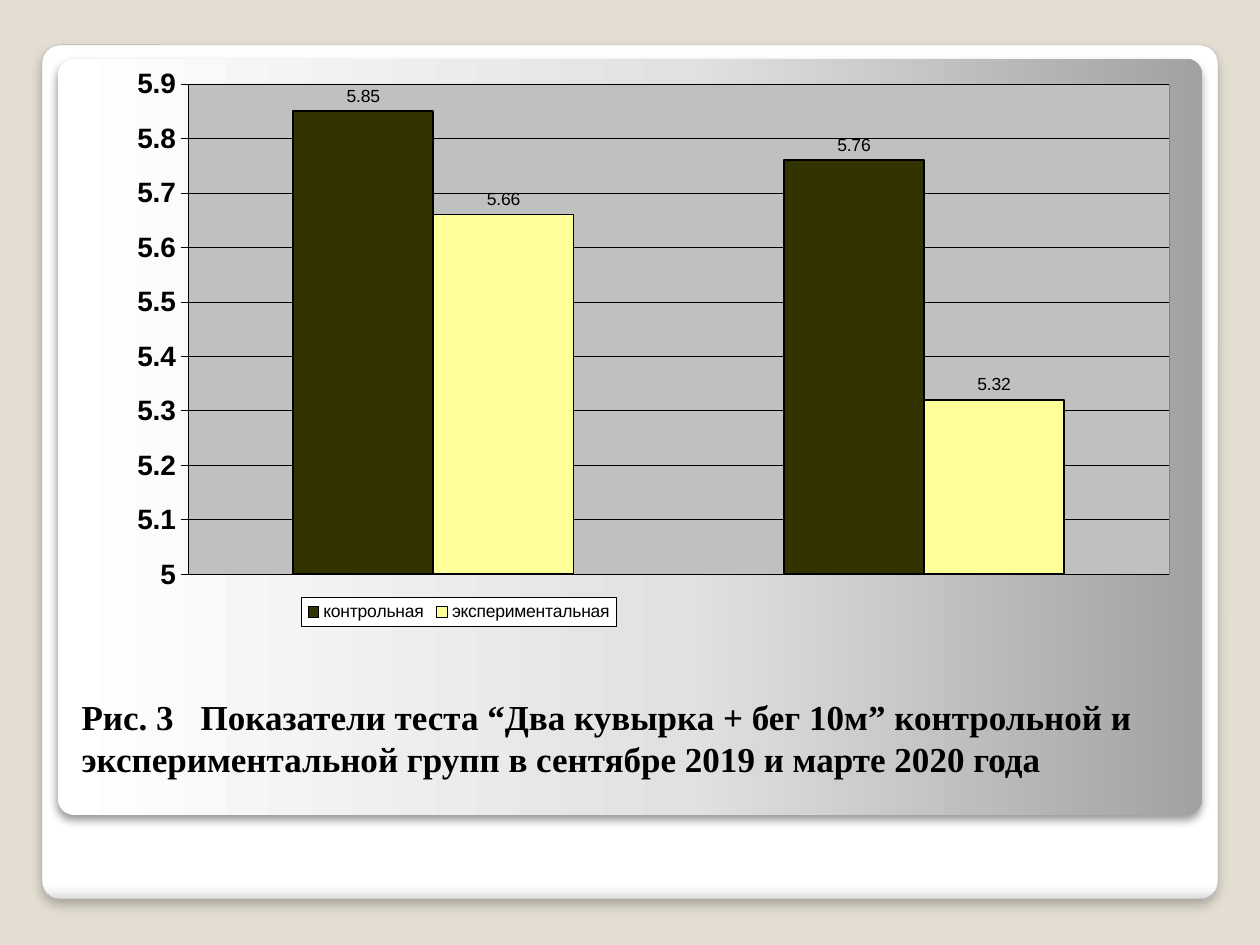
from dataclasses import dataclass

from pptx import Presentation
from pptx.chart.data import CategoryChartData
from pptx.dml.color import RGBColor as Rgb
from pptx.enum.chart import XL_CHART_TYPE as ChartKind
from pptx.enum.chart import XL_LABEL_POSITION as LabelPlace
from pptx.enum.chart import XL_LEGEND_POSITION as LegendPlace
from pptx.enum.chart import XL_TICK_MARK as Tick
from pptx.enum.shapes import MSO_SHAPE as Shape
from pptx.enum.text import MSO_ANCHOR as Anchor
from pptx.enum.text import MSO_AUTO_SIZE as AutoSize
from pptx.enum.text import PP_ALIGN as Align
from pptx.oxml import parse_xml
from pptx.oxml.ns import nsdecls
from pptx.util import Pt


@dataclass(frozen=True)
class Theme:
    backdrop: str = "E3DED1"
    ink: str = "000000"
    white: str = "FFFFFF"
    frame_line: str = "A4A4A3"
    plot: str = "C0C0C0"
    plot_line: str = "808080"
    control: str = "333300"
    experimental: str = "FFFF99"
    caption_font: str = "Times New Roman"
    chart_font: str = "Arial"
    caption_size: int = 20
    axis_size: int = 16
    chart_size: int = 10


theme = Theme()
PX = 914400 / 126


def add_panel(page, bounds, stops, angle, shadow, line=None):
    panel = page.shapes.add_shape(Shape.ROUNDED_RECTANGLE, *[round(n * PX) for n in bounds])
    panel.adjustments[0] = 0.021
    marks = "".join(
        f'<a:gs pos="{at * 1000}"><a:srgbClr val="{color}"/></a:gs>' for at, color in stops
    )
    panel.element.spPr.append(parse_xml(
        f'<a:gradFill {nsdecls("a")} rotWithShape="1"><a:gsLst>{marks}</a:gsLst>'
        f'<a:lin ang="{angle * 60000}" scaled="0"/></a:gradFill>'
    ))
    if line:
        panel.line.color.rgb = Rgb.from_string(line)
        panel.line.width = Pt(0.17)
    else:
        panel.line.fill.background()
    opacity, blur, distance = shadow
    panel.element.spPr.append(parse_xml(
        f'<a:effectLst {nsdecls("a")}><a:outerShdw blurRad="{Pt(blur)}" dist="{Pt(distance)}" '
        f'dir="5400000" algn="t" rotWithShape="0"><a:srgbClr val="{theme.ink}">'
        f'<a:alpha val="{opacity * 1000}"/></a:srgbClr></a:outerShdw></a:effectLst>'
    ))


def write_text(frame, text, *, font, size, color, bold=False, tab=None):
    para = frame.paragraphs[0]
    para.alignment = Align.LEFT
    if tab:
        para._p.get_or_add_pPr().append(parse_xml(
            f'<a:tabLst {nsdecls("a")}><a:tab pos="{round(tab * PX)}" algn="l"/></a:tabLst>'
        ))
    span = para.add_run()
    span.text = text
    span.font.name = font
    span.font.size = Pt(size)
    span.font.bold = bold
    span.font.color.rgb = Rgb.from_string(color)


deck = Presentation()
deck.slide_width = round(1260 * PX)
deck.slide_height = round(945 * PX)
page = deck.slides.add_slide(deck.slide_layouts[5])
page.background.fill.solid()
page.background.fill.fore_color.rgb = Rgb.from_string(theme.backdrop)

add_panel(page, (42, 45, 1176, 854),
          [(0, theme.white), (98, theme.white), (99, "F7F7F7"), (100, "DADADA")],
          90, (25, 6, 4), theme.frame_line)
add_panel(page, (58, 59, 1144, 756),
          [(0, theme.white), (55, "E1E1E1"), (100, "A2A2A2")], 0, (40, 5.2, 3))

caption = page.shapes.title
caption.element.getparent().append(caption.element)
caption.left, caption.top, caption.width, caption.height = [
    round(n * PX) for n in (69, 694, 1128, 92)
]
frame = caption.text_frame
frame.word_wrap = True
frame.auto_size = AutoSize.NONE
frame.vertical_anchor = Anchor.BOTTOM
write_text(
    frame,
    "Рис. 3\tПоказатели теста “Два кувырка + бег 10м” контрольной и "
    "экспериментальной групп в сентябре 2019 и марте 2020 года",
    font=theme.caption_font, size=theme.caption_size, color=theme.ink, bold=True, tab=119,
)

groups = [
    ("контрольная", (5.85, 5.76), theme.control),
    ("экспериментальная", (5.66, 5.32), theme.experimental),
]
results = CategoryChartData()
results.categories = ["1", "2"]
for name, values, color in groups:
    results.add_series(name, values)
chart = page.shapes.add_chart(
    ChartKind.COLUMN_CLUSTERED, *[round(n * PX) for n in (64, 55, 1128, 577)], results
).chart
chart.has_title = False
chart.font.name = theme.chart_font
chart.font.size = Pt(theme.chart_size)
chart.font.color.rgb = Rgb.from_string(theme.ink)
chart.has_legend = True
chart.legend.position = LegendPlace.BOTTOM
chart.legend.include_in_layout = False

columns = chart.plots[0]
columns.gap_width = 150
columns.overlap = 0
columns.vary_by_categories = False
for series, (name, values, color) in zip(columns.series, groups):
    series.format.fill.solid()
    series.format.fill.fore_color.rgb = Rgb.from_string(color)
    series.format.line.color.rgb = Rgb.from_string(theme.ink)
    series.format.line.width = Pt(1)
    series.data_labels.show_value = True
    series.data_labels.position = LabelPlace.OUTSIDE_END

chart.category_axis.visible = False
axis = chart.value_axis
axis.minimum_scale, axis.maximum_scale, axis.major_unit = 5, 5.9, 0.1
axis.major_tick_mark = Tick.OUTSIDE
axis.minor_tick_mark = Tick.NONE
axis.tick_labels.number_format = "General"
axis.tick_labels.number_format_is_linked = False
axis.tick_labels.font.name = theme.chart_font
axis.tick_labels.font.size = Pt(theme.axis_size)
axis.tick_labels.font.bold = True
axis.tick_labels.font.color.rgb = Rgb.from_string(theme.ink)
axis.has_major_gridlines = True
for rule in (axis.format.line, axis.major_gridlines.format.line):
    rule.color.rgb = Rgb.from_string(theme.ink)
    rule.width = Pt(0.25)

chart_space = chart.element
plot_area = chart_space.xpath("c:chart/c:plotArea")[0]
legend = chart_space.xpath("c:chart/c:legend")[0]
for part, index, target, box, fill, line in (
    (plot_area, 0, '<c:layoutTarget val="inner"/>', (0.11, 0.05, 0.87, 0.85),
     theme.plot, theme.plot_line),
    (legend, 1, "", (0.21, 0.94, 0.28, 0.05), theme.white, theme.ink),
):
    for layout in part.xpath("c:layout"):
        part.remove(layout)
    places = "".join(f'<c:{key}Mode val="edge"/>' for key in "xy")
    places += "".join(f'<c:{key} val="{value}"/>' for key, value in zip("xywh", box))
    part.insert(index, parse_xml(
        f'<c:layout {nsdecls("c")}><c:manualLayout>{target}{places}</c:manualLayout></c:layout>'
    ))
    part.append(parse_xml(
        f'<c:spPr {nsdecls("c", "a")}><a:solidFill><a:srgbClr val="{fill}"/></a:solidFill>'
        f'<a:ln w="{Pt(0.25)}"><a:solidFill><a:srgbClr val="{line}"/></a:solidFill></a:ln></c:spPr>'
    ))
chart_space.xpath("c:txPr")[0].addprevious(parse_xml(
    f'<c:spPr {nsdecls("c", "a")}><a:noFill/><a:ln><a:noFill/></a:ln></c:spPr>'
))

deck.save("out.pptx")
